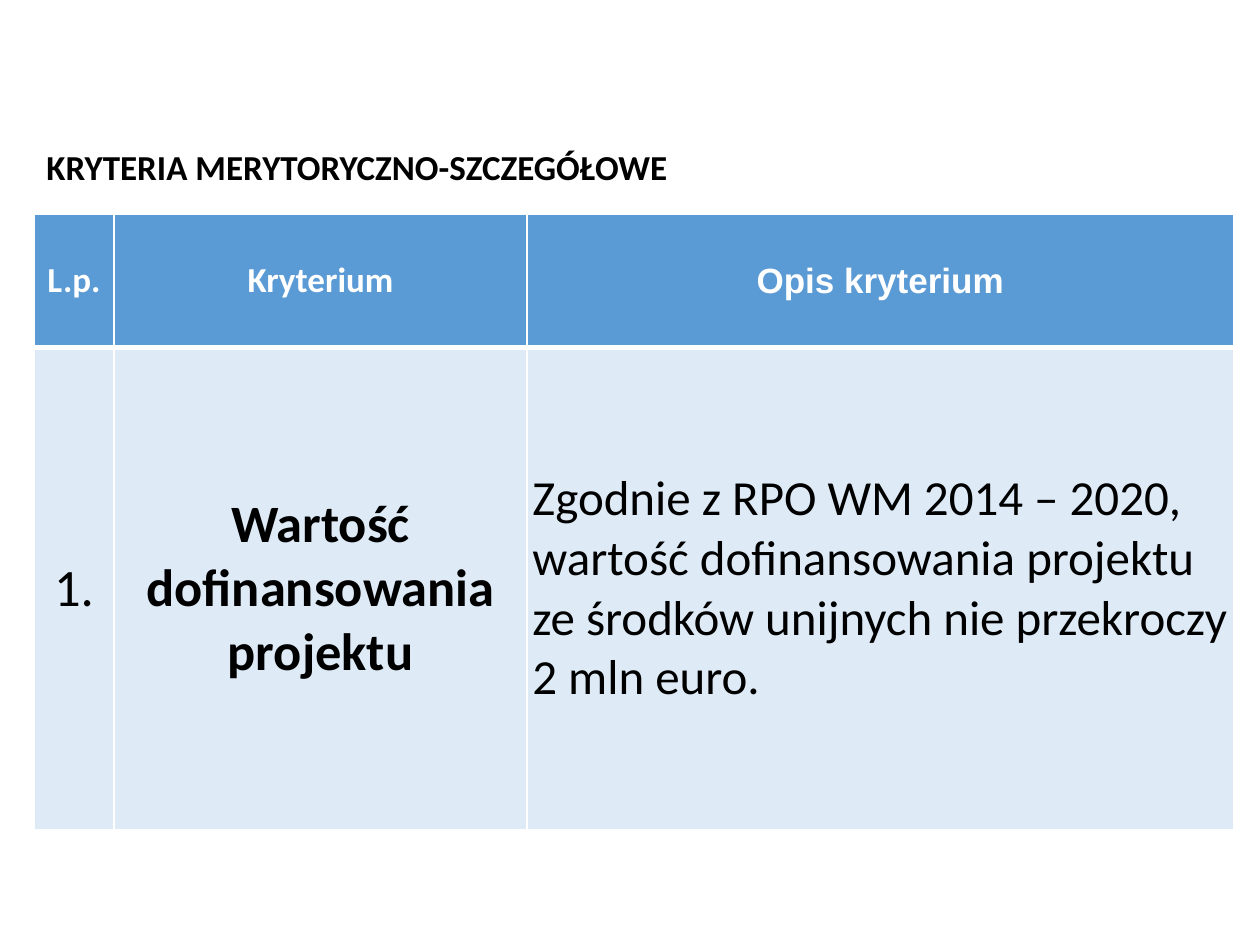
from dataclasses import dataclass

import lxml.etree
import pptx
import pptx.dml.color
import pptx.enum.text
import pptx.oxml.ns
import pptx.util

Pt = pptx.util.Pt
Align = pptx.enum.text.PP_ALIGN
Anchor = pptx.enum.text.MSO_ANCHOR

COLORS = {
    "header": "5B9BD5",
    "body": "DEEBF7",
    "border": "FFFFFF",
    "header_text": "FFFFFF",
    "text": "000000",
}
LEFT = 19.44
COLUMN_WIDTHS = (45.7, 236.1, 403.6)
ROW_HEIGHTS = (75.9, 275.5)
THIN, THICK = 1, 3


@dataclass(frozen=True)
class TextStyle:
    size: float
    color: str
    bold: bool = False
    font: str = "Calibri"
    align: Align = Align.CENTER


@dataclass(frozen=True)
class CellContent:
    text: str
    style: TextStyle
    margin: float | None = None


HEADING = TextStyle(20, "text", bold=True, align=Align.LEFT)
HEADER = TextStyle(20, "header_text", bold=True)
ROWS = (
    (
        CellContent("L.p.", HEADER),
        CellContent("Kryterium", HEADER),
        CellContent("Opis kryterium", TextStyle(20, "header_text", bold=True, font="Arial")),
    ),
    (
        CellContent("1.", TextStyle(30, "text")),
        CellContent("Wartość dofinansowania projektu", TextStyle(30, "text", bold=True)),
        CellContent(
            "Zgodnie z RPO WM 2014 – 2020, wartość dofinansowania projektu "
            "ze środków unijnych nie przekroczy 2 mln euro.",
            TextStyle(28, "text", align=Align.LEFT),
            margin=3,
        ),
    ),
)


def rgb(name: str) -> pptx.dml.color.RGBColor:
    return pptx.dml.color.RGBColor.from_string(COLORS[name])


def write_text(frame, text: str, style: TextStyle) -> None:
    paragraph = frame.paragraphs[0]
    paragraph.text = text
    paragraph.alignment = style.align
    font = paragraph.font
    font.name, font.size, font.bold = style.font, Pt(style.size), style.bold
    font.color.rgb = rgb(style.color)


def add_borders(cell, top: float, bottom: float) -> None:
    """Add the border lines; call before the fill, which must follow them."""
    qn = pptx.oxml.ns.qn
    properties = cell._tc.get_or_add_tcPr()
    for side, width in (("L", THIN), ("R", THIN), ("T", top), ("B", bottom)):
        line = lxml.etree.SubElement(properties, qn(f"a:ln{side}"), w=str(Pt(width)))
        fill = lxml.etree.SubElement(line, qn("a:solidFill"))
        lxml.etree.SubElement(fill, qn("a:srgbClr"), val=COLORS["border"])


def fill_cell(cell, content: CellContent, is_header: bool) -> None:
    add_borders(cell, THIN if is_header else THICK, THICK if is_header else THIN)
    cell.fill.solid()
    cell.fill.fore_color.rgb = rgb("header" if is_header else "body")
    cell.vertical_anchor = Anchor.MIDDLE
    if content.margin is not None:
        cell.margin_left = cell.margin_right = Pt(content.margin)
        cell.margin_top = cell.margin_bottom = Pt(content.margin)
    write_text(cell.text_frame, content.text, content.style)


def add_criteria_table(slide) -> None:
    shape = slide.shapes.add_table(
        len(ROW_HEIGHTS), len(COLUMN_WIDTHS), Pt(LEFT), Pt(122.6),
        Pt(sum(COLUMN_WIDTHS)), Pt(sum(ROW_HEIGHTS)),
    )
    table = shape.table
    for column, width in zip(table.columns, COLUMN_WIDTHS):
        column.width = Pt(width)
    for row, height in zip(table.rows, ROW_HEIGHTS):
        row.height = Pt(height)
    for row_index, contents in enumerate(ROWS):
        for column_index, content in enumerate(contents):
            fill_cell(table.cell(row_index, column_index), content, row_index == 0)


def add_heading(slide) -> None:
    shape = slide.shapes.add_textbox(Pt(LEFT), Pt(79.2), Pt(372.2), Pt(31.7))
    frame = shape.text_frame
    frame.word_wrap = False
    frame.auto_size = pptx.enum.text.MSO_AUTO_SIZE.SHAPE_TO_FIT_TEXT
    frame.vertical_anchor = Anchor.MIDDLE
    write_text(frame, "KRYTERIA MERYTORYCZNO-SZCZEGÓŁOWE", HEADING)


def main() -> None:
    presentation = pptx.Presentation()
    presentation.slide_width, presentation.slide_height = Pt(720), Pt(540)
    slide = presentation.slides.add_slide(presentation.slide_layouts[6])
    add_criteria_table(slide)
    add_heading(slide)
    presentation.save("out.pptx")


if __name__ == "__main__":
    main()
